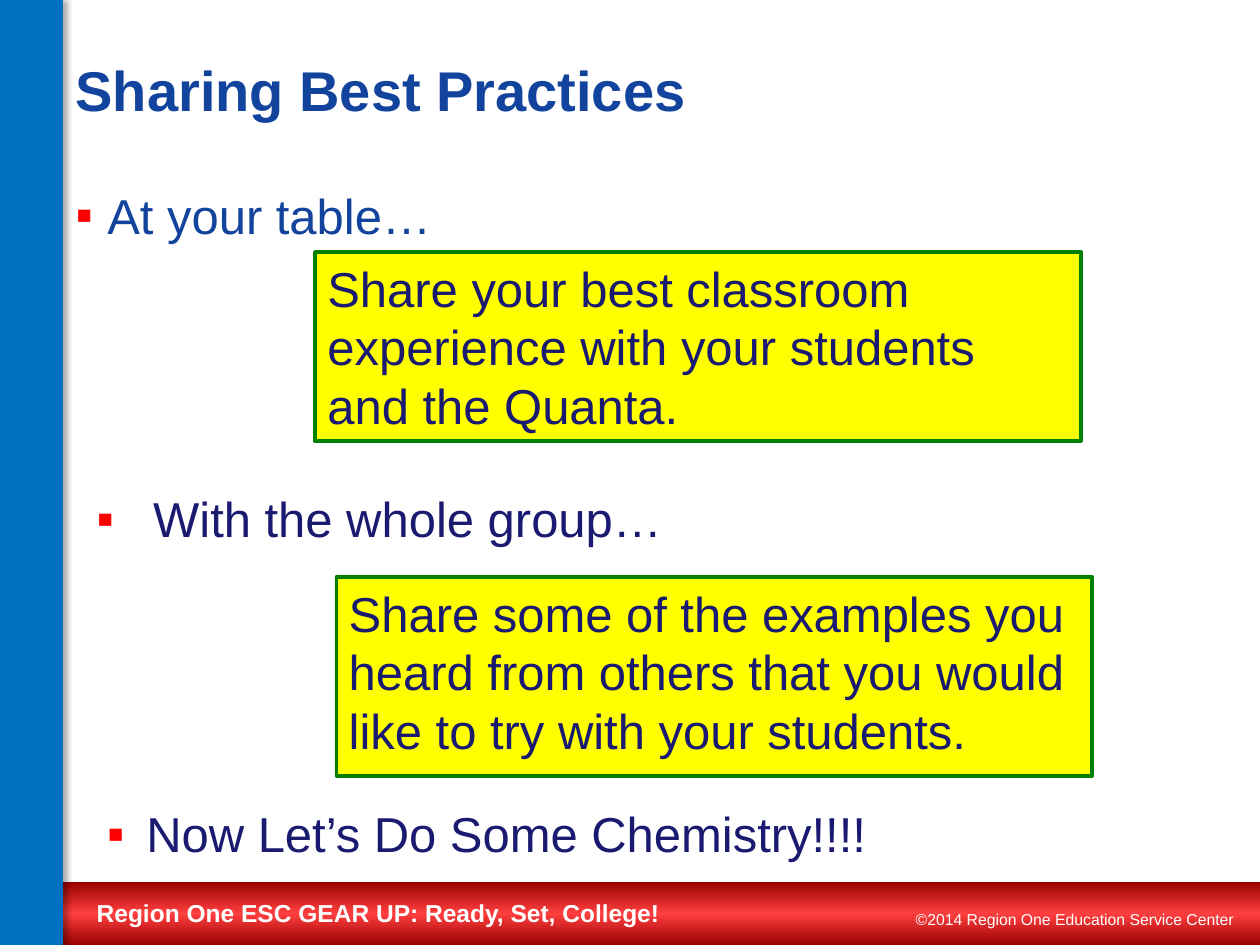
from copy import deepcopy

from lxml import etree
from pptx import Presentation
from pptx.dml.color import RGBColor
from pptx.enum.shapes import MSO_SHAPE
from pptx.enum.text import MSO_ANCHOR, MSO_AUTO_SIZE, PP_ALIGN
from pptx.oxml import parse_xml
from pptx.oxml.ns import nsdecls, qn
from pptx.util import Cm, Pt

RECTANGLE = MSO_SHAPE.RECTANGLE
LEFT = PP_ALIGN.LEFT
TOP, MIDDLE = MSO_ANCHOR.TOP, MSO_ANCHOR.MIDDLE
NO_FIT = MSO_AUTO_SIZE.NONE

THEME = {
    "font": "Arial",
    "title": "12449E",
    "text": "1A1A70",
    "light": "FFFFFF",
    "bullet": "FF0000",
    "note": "FFFF00",
    "note_line": "008000",
    "strip": "0070C0",
    "footer": ("9A0000", "FF3F3F", "9A0000"),
    "title_size": 32,
    "text_size": 28,
    "footer_size": 14,
    "copyright_size": 9,
}


def place(shape, bounds):
    shape.left, shape.top, shape.width, shape.height = [Cm(value) for value in bounds]


def write(shape, text, size, color, bold=False, anchor=TOP, indent=None):
    frame = shape.text_frame
    frame.word_wrap = True
    frame.auto_size = NO_FIT
    frame.vertical_anchor = anchor
    frame.text = text
    paragraph = frame.paragraphs[0]
    paragraph.alignment = LEFT
    paragraph.space_before = Pt(0)
    if indent:
        properties = paragraph._p.get_or_add_pPr()
        properties.set("marL", str(Cm(indent)))
        properties.set("indent", str(-Cm(indent)))
        bullet_color = etree.SubElement(properties, qn("a:buClr"))
        etree.SubElement(bullet_color, qn("a:srgbClr"), val=THEME["bullet"])
        etree.SubElement(properties, qn("a:buFont"), typeface=THEME["font"])
        etree.SubElement(properties, qn("a:buChar"), char="▪")
    paragraph.font.name = THEME["font"]
    paragraph.font.size = Pt(THEME[size])
    paragraph.font.bold = bold
    paragraph.font.color.rgb = RGBColor.from_string(THEME[color])


deck = Presentation()
deck.slide_width, deck.slide_height = Cm(25.4), Cm(19.05)
page = deck.slides.add_slide(deck.slide_layouts[1])
shapes = page.shapes

footer = shapes.add_shape(RECTANGLE, Cm(0), Cm(17.78), Cm(25.4), Cm(1.27))
footer.shadow.inherit = False
footer.line.fill.background()
footer.fill.gradient()
footer.fill.gradient_angle = 90
stop_list = footer.element.spPr.find(".//" + qn("a:gsLst"))
stop_list.append(deepcopy(stop_list[-1]))
for index, stop in enumerate(footer.fill.gradient_stops):
    stop.position = index / 2
    stop.color.rgb = RGBColor.from_string(THEME["footer"][index])

strip = shapes.add_shape(RECTANGLE, Cm(0), Cm(0), Cm(1.27), Cm(19.05))
strip.shadow.inherit = False
strip.fill.solid()
strip.fill.fore_color.rgb = RGBColor.from_string(THEME["strip"])
strip.line.fill.background()
strip.element.spPr.find(qn("a:effectLst")).append(parse_xml(
    f'<a:outerShdw {nsdecls("a")} blurRad="{Pt(3.5)}" dist="{Pt(2.2)}" dir="0">'
    '<a:srgbClr val="000000"><a:alpha val="32000"/></a:srgbClr></a:outerShdw>'
))

footer_texts = [
    ("Region One ESC GEAR UP: Ready, Set, College!", (1.7, 17.98, 13.54, 0.86), "footer_size", True),
    ("©2014 Region One Education Service Center", (18.21, 18.21, 6.99, 0.64), "copyright_size", False),
]
for text, bounds, size, bold in footer_texts:
    box = shapes.add_textbox(*[Cm(value) for value in bounds])
    write(box, text, size, "light", bold)

body = page.placeholders[1]
place(body, (1.27, 3.61, 23.5, 4.65))
write(body, "At your table…", "text_size", "title", indent=0.64)

title = shapes.title
place(title, (1.27, 0.43, 23.5, 2.74))
write(title, "Sharing Best Practices", "title_size", "title", bold=True, anchor=MIDDLE)

notes = [
    ("Share your best classroom experience with your students and the Quanta.", (6.35, 5.08, 15.44, 3.81)),
    ("Share some of the examples you heard from others that you would like to try with your students.",
     (6.78, 11.63, 15.24, 4.01)),
]
for text, bounds in notes:
    note = shapes.add_shape(RECTANGLE, *[Cm(value) for value in bounds])
    note.shadow.inherit = False
    note.fill.solid()
    note.fill.fore_color.rgb = RGBColor.from_string(THEME["note"])
    note.line.color.rgb = RGBColor.from_string(THEME["note_line"])
    note.line.width = Pt(2)
    write(note, text, "text_size", "text")

steps = [
    ("With the whole group…", (1.7, 9.73, 12.5, 1.45), 1.14),
    ("Now Let’s Do Some Chemistry!!!!", (1.91, 16.08, 17.58, 1.45), 0.79),
]
for text, bounds, indent in steps:
    step = shapes.add_textbox(*[Cm(value) for value in bounds])
    write(step, text, "text_size", "text", indent=indent)

deck.save("out.pptx")
